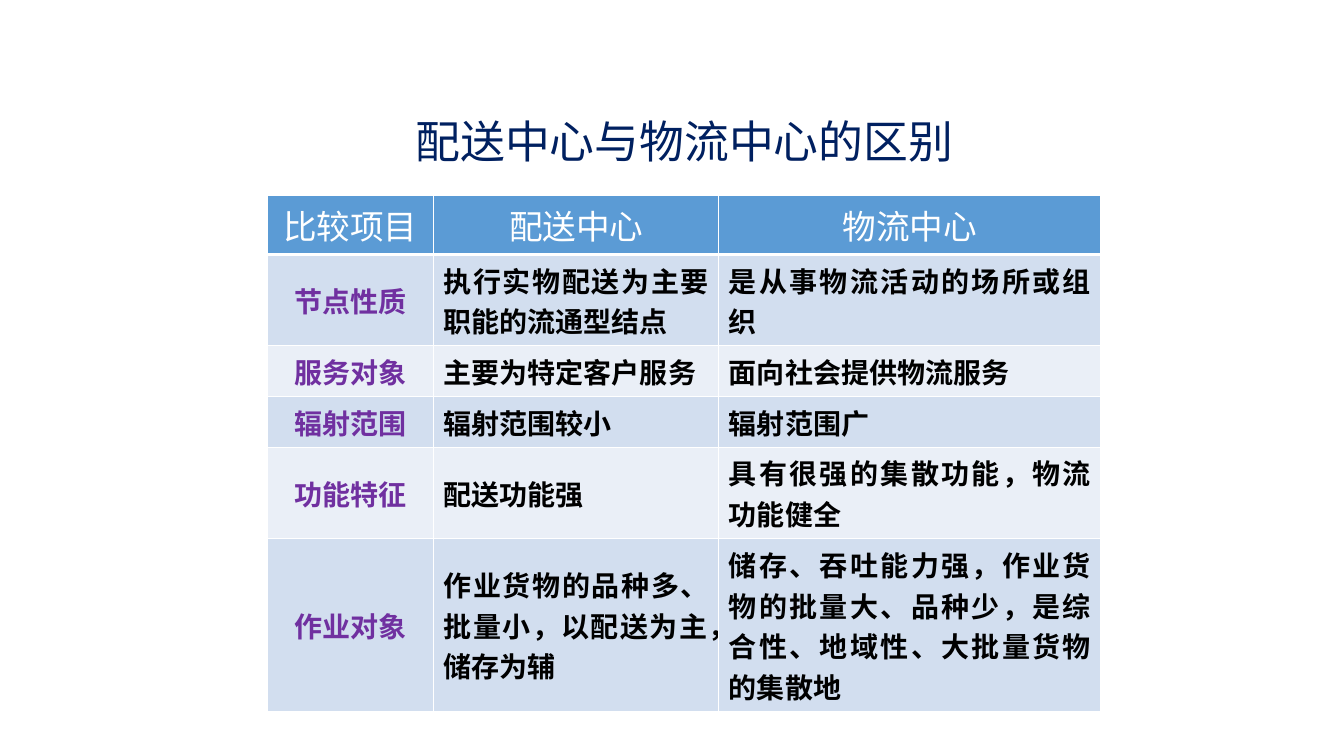
from pptx import Presentation
from pptx.dml.color import RGBColor
from pptx.enum.text import MSO_ANCHOR as Anchor, PP_ALIGN as Align
from pptx.oxml import parse_xml
from pptx.oxml.ns import nsdecls
from pptx.util import Inches, Pt

TITLE = "配送中心与物流中心的区别"
HEADINGS = ("比较项目", "配送中心", "物流中心")
COMPARISONS = [
    ("节点性质", "执行实物配送为主要职能的流通型结点", "是从事物流活动的场所或组织"),
    ("服务对象", "主要为特定客户服务", "面向社会提供物流服务"),
    ("辐射范围", "辐射范围较小", "辐射范围广"),
    ("功能特征", "配送功能强", "具有很强的集散功能，物流功能健全"),
    ("作业对象", "作业货物的品种多、批量小，以配送为主，储存为辅",
     "储存、吞吐能力强，作业货物的批量大、品种少，是综合性、地域性、大批量货物的集散地"),
]
COLUMN_WIDTHS = (1.65, 2.83, 3.79)
ROW_HEIGHT = 0.41

THEME = {
    "title_font": "Noto Sans CJK JP", "table_font": "Noto Sans CJK SC",
    "title_size": 32, "heading_size": 24, "body_size": 20,
    "title": "002060", "heading": "FFFFFF", "item": "7030A0", "body": "000000",
    "heading_fill": "5B9BD5", "bands": ("D2DEEF", "EAEFF7"),
    "border": "FFFFFF", "border_width": 1, "heading_rule": 3,
}


def write(frame, text, font, size, color, align, bold=False):
    frame.text = text
    paragraph = frame.paragraphs[0]
    paragraph.alignment = align
    run = paragraph.runs[0]
    run.font.size = Pt(size)
    run.font.bold = bold
    run.font.color.rgb = RGBColor.from_string(color)
    run.font.name = font
    run._r.get_or_add_rPr().append(
        parse_xml(f'<a:ea {nsdecls("a")} typeface="{font}"/>'))
    return paragraph


def set_borders(cell, row):
    widths = dict.fromkeys(("lnL", "lnR", "lnT", "lnB"), THEME["border_width"])
    if row == 0:
        widths["lnB"] = THEME["heading_rule"]
    elif row == 1:
        widths["lnT"] = THEME["heading_rule"]
    properties = cell._tc.get_or_add_tcPr()
    for position, (side, width) in enumerate(widths.items()):
        properties.insert(position, parse_xml(
            f'<a:{side} {nsdecls("a")} w="{Pt(width)}"><a:solidFill>'
            f'<a:srgbClr val="{THEME["border"]}"/></a:solidFill></a:{side}>'))


def add_title(slide):
    title = slide.shapes.title
    title.left, title.top = Inches(1.88), Inches(0.91)
    title.width, title.height = Inches(9.82), Inches(1.03)
    title.text_frame.vertical_anchor = Anchor.MIDDLE
    paragraph = write(title.text_frame, TITLE, THEME["title_font"],
                      THEME["title_size"], THEME["title"], Align.CENTER)
    paragraph.line_spacing = 0.9


def add_comparison(slide):
    rows = [HEADINGS, *COMPARISONS]
    table = slide.shapes.add_table(
        len(rows), len(HEADINGS), Inches(2.65), Inches(1.94),
        Inches(sum(COLUMN_WIDTHS)), Inches(ROW_HEIGHT * len(rows))).table
    for column, width in zip(table.columns, COLUMN_WIDTHS):
        column.width = Inches(width)
    for r, texts in enumerate(rows):
        table.rows[r].height = Inches(ROW_HEIGHT)
        heading = r == 0
        fill = THEME["heading_fill"] if heading else THEME["bands"][(r - 1) % 2]
        for c, text in enumerate(texts):
            cell = table.cell(r, c)
            role = "heading" if heading else "item" if c == 0 else "body"
            write(cell.text_frame, text, THEME["table_font"],
                  THEME["heading_size" if heading else "body_size"], THEME[role],
                  Align.JUSTIFY if role == "body" else Align.CENTER, not heading)
            cell.vertical_anchor = Anchor.TOP if heading else Anchor.MIDDLE
            cell.fill.solid()
            cell.fill.fore_color.rgb = RGBColor.from_string(fill)
            set_borders(cell, r)


def main():
    deck = Presentation()
    deck.slide_width, deck.slide_height = Inches(13.33), Inches(7.5)
    slide = deck.slides.add_slide(deck.slide_layouts[5])
    add_title(slide)
    add_comparison(slide)
    deck.save("out.pptx")


if __name__ == "__main__":
    main()
